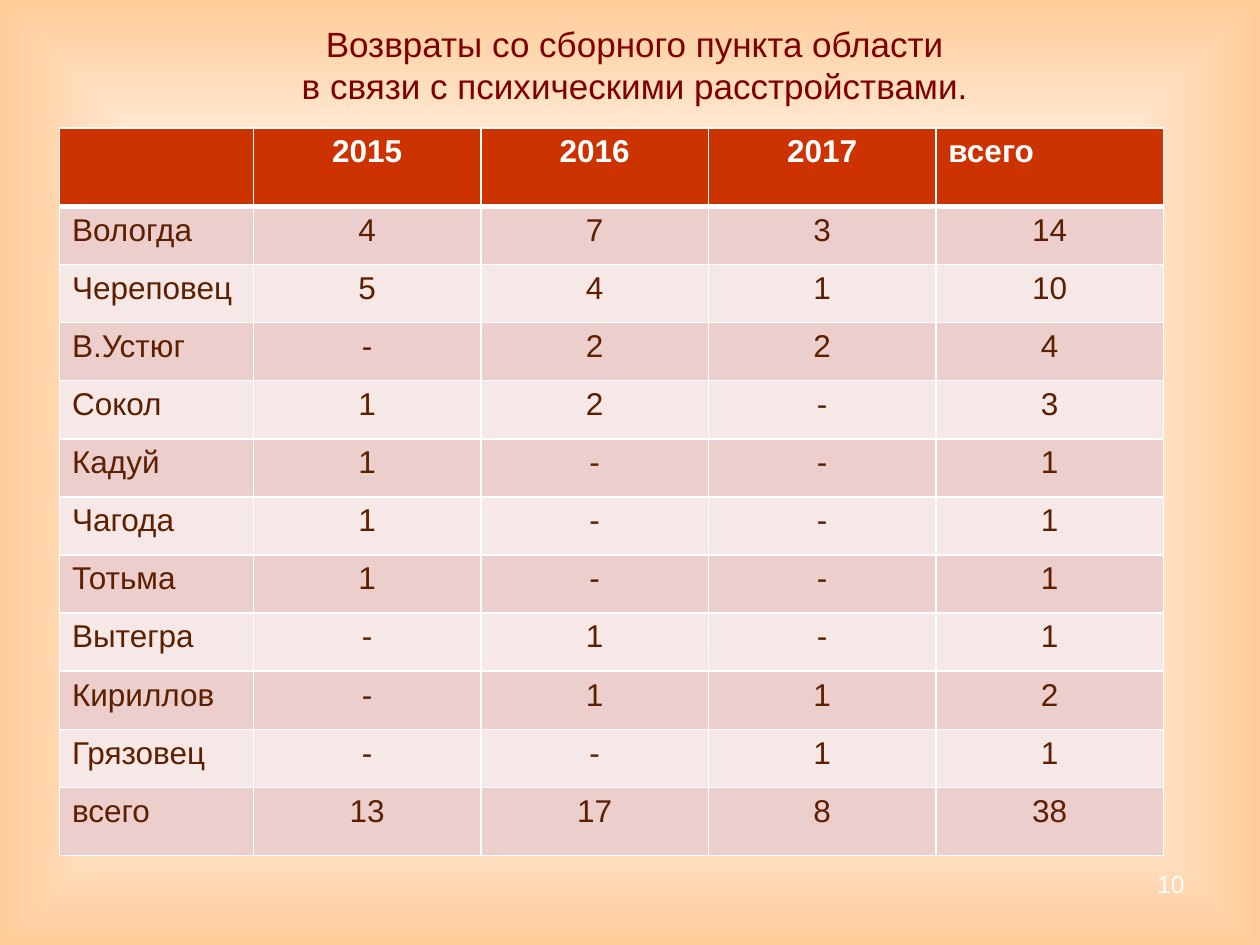
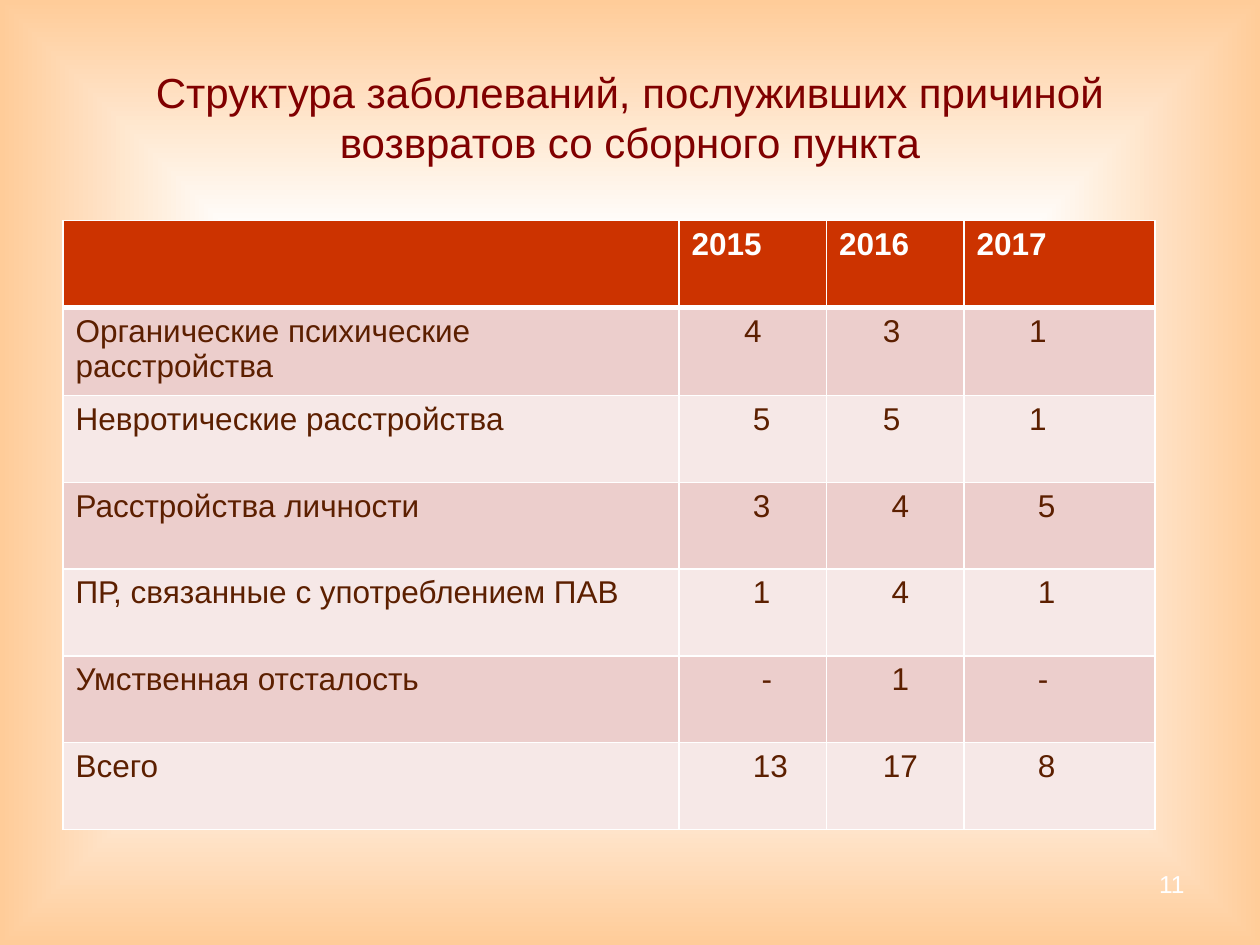
import pptx
import pptx.dml.color
import pptx.enum.text
import pptx.oxml
import pptx.oxml.ns
import pptx.util

Pt = pptx.util.Pt
RGBColor = pptx.dml.color.RGBColor
PP_ALIGN = pptx.enum.text.PP_ALIGN
MSO_ANCHOR = pptx.enum.text.MSO_ANCHOR
qn = pptx.oxml.ns.qn

PEACH = RGBColor(0xFF, 0xCC, 0x99)
WHITE = RGBColor(0xFF, 0xFF, 0xFF)
MAROON = RGBColor(0x80, 0x00, 0x00)
BROWN = RGBColor(0x5C, 0x1F, 0x00)
RED = RGBColor(0xCC, 0x33, 0x00)
BANDS = (RGBColor(0xEC, 0xCE, 0xCC), RGBColor(0xF6, 0xE8, 0xE7))
FONT = "Arial"
LEFT, CENTER, RIGHT = PP_ALIGN.LEFT, PP_ALIGN.CENTER, PP_ALIGN.RIGHT
SPACE = 5

RETURNS = [
    ["", "2015", "2016", "2017", "всего"],
    ["Вологда", "4", "7", "3", "14"],
    ["Череповец", "5", "4", "1", "10"],
    ["В.Устюг", "-", "2", "2", "4"],
    ["Сокол", "1", "2", "-", "3"],
    ["Кадуй", "1", "-", "-", "1"],
    ["Чагода", "1", "-", "-", "1"],
    ["Тотьма", "1", "-", "-", "1"],
    ["Вытегра", "-", "1", "-", "1"],
    ["Кириллов", "-", "1", "1", "2"],
    ["Грязовец", "-", "-", "1", "1"],
    ["всего", "13", "17", "8", "38"],
]
DISORDERS = [
    ["", "2015", "2016", "2017"],
    ["Органические психические расстройства", "4", "3", "1"],
    ["Невротические расстройства", "5", "5", "1"],
    ["Расстройства личности", "3", "4", "5"],
    ["ПР, связанные с употреблением ПАВ", "1", "4", "1"],
    ["Умственная отсталость", "-", "1", "-"],
    ["Всего", "13", "17", "8"],
]
DISORDER_INDENTS = [
    (0, 0, 0, 0),
    (0, 6, 5, 6),
    (0, 7, 5, 6),
    (0, 7, 6, 7),
    (0, 7, 6, 7),
    (0, 8, 6, 7),
    (0, 7, 5, 7),
]


def write(frame, text, size=18, color=BROWN, bold=False, align=LEFT, indent=0):
    paragraph = frame.paragraphs[0]
    paragraph.text = text
    paragraph.alignment = align
    if indent:
        properties = paragraph._p.get_or_add_pPr()
        properties.set("marL", str(Pt(indent)))
        properties.set("indent", "0")
    for run in paragraph.runs:
        run.font.name = FONT
        run.font.size = Pt(size)
        run.font.bold = bold
        run.font.color.rgb = color


def add_text(slide, text, left, top, width, height, bottom_inset=3.6, **style):
    frame = slide.shapes.add_textbox(Pt(left), Pt(top), Pt(width), Pt(height)).text_frame
    frame.word_wrap = True
    frame.vertical_anchor = MSO_ANCHOR.MIDDLE
    frame.margin_top = 0 if bottom_inset > 3.6 else Pt(3.6)
    frame.margin_bottom = Pt(bottom_inset)
    write(frame, text, **style)


def paint_background(slide):
    slide.background.fill.gradient()
    gradient = slide.element.find(".//" + qn("a:gradFill"))
    stops = "".join(
        f'<a:gs pos="{position}"><a:srgbClr val="{color}"/></a:gs>'
        for position, color in ((0, PEACH), (50000, WHITE), (100000, PEACH))
    )
    gradient.getparent().replace(gradient, pptx.oxml.parse_xml(
        f'<a:gradFill {pptx.oxml.ns.nsdecls("a")} rotWithShape="0">'
        f'<a:gsLst>{stops}</a:gsLst><a:path path="shape">'
        '<a:fillToRect l="50000" t="50000" r="50000" b="50000"/></a:path></a:gradFill>'
    ))


def set_borders(cell, row):
    widths = {"lnL": 1, "lnR": 1, "lnT": 3 if row == 1 else 1, "lnB": 3 if row == 0 else 1}
    properties = cell._tc.get_or_add_tcPr()
    for side, width in widths.items():
        properties.append(pptx.oxml.parse_xml(
            f'<a:{side} {pptx.oxml.ns.nsdecls("a")} w="{Pt(width)}"><a:solidFill>'
            f'<a:srgbClr val="{WHITE}"/></a:solidFill></a:{side}>'
        ))


def add_grid(slide, rows, left, top, widths, heights, cell_format):
    table = slide.shapes.add_table(
        len(rows), len(widths), Pt(left), Pt(top), Pt(sum(widths)), Pt(sum(heights))
    ).table
    for column, width in zip(table.columns, widths):
        column.width = Pt(width)
    for line, height in zip(table.rows, heights):
        line.height = Pt(height)
    for row, values in enumerate(rows):
        header = row == 0
        for column, value in enumerate(values):
            cell = table.cell(row, column)
            set_borders(cell, row)
            cell.fill.solid()
            cell.fill.fore_color.rgb = RED if header else BANDS[(row - 1) % 2]
            write(cell.text_frame, value, color=WHITE if header else BROWN,
                  bold=header, **cell_format(row, column))


def returns_format(row, column):
    left_aligned = column == 0 or (row, column) == (0, 4)
    return {"align": LEFT if left_aligned else CENTER}


def disorders_format(row, column):
    return {"indent": DISORDER_INDENTS[row][column] * SPACE}


def add_slide(deck, number):
    slide = deck.slides.add_slide(deck.slide_layouts[6])
    paint_background(slide)
    add_text(slide, str(number), 516, 487, 168, 36, size=14, color=WHITE, align=RIGHT)
    return slide


def main():
    deck = pptx.Presentation()
    deck.slide_width, deck.slide_height = Pt(720), Pt(540)

    returns = add_slide(deck, 10)
    add_text(returns, "Возвраты со сборного пункта области\vв связи с психическими расстройствами.",
             56, 16.5, 613.5, 62, bottom_inset=21, size=20, color=MAROON, align=CENTER)
    add_grid(returns, RETURNS, 34, 73.2, [110.8] + [130] * 4,
             [44.8] + [33.2] * 10 + [39], returns_format)

    disorders = add_slide(deck, 11)
    add_text(disorders, "Структура заболеваний, послуживших причиной возвратов со сборного пункта",
             36, 21.6, 648, 90, size=24, color=MAROON, align=CENTER)
    add_grid(disorders, DISORDERS, 36, 126, [352, 84.3, 78.6, 109.3],
             [49.6] * 7, disorders_format)

    deck.save("out.pptx")


if __name__ == "__main__":
    main()
